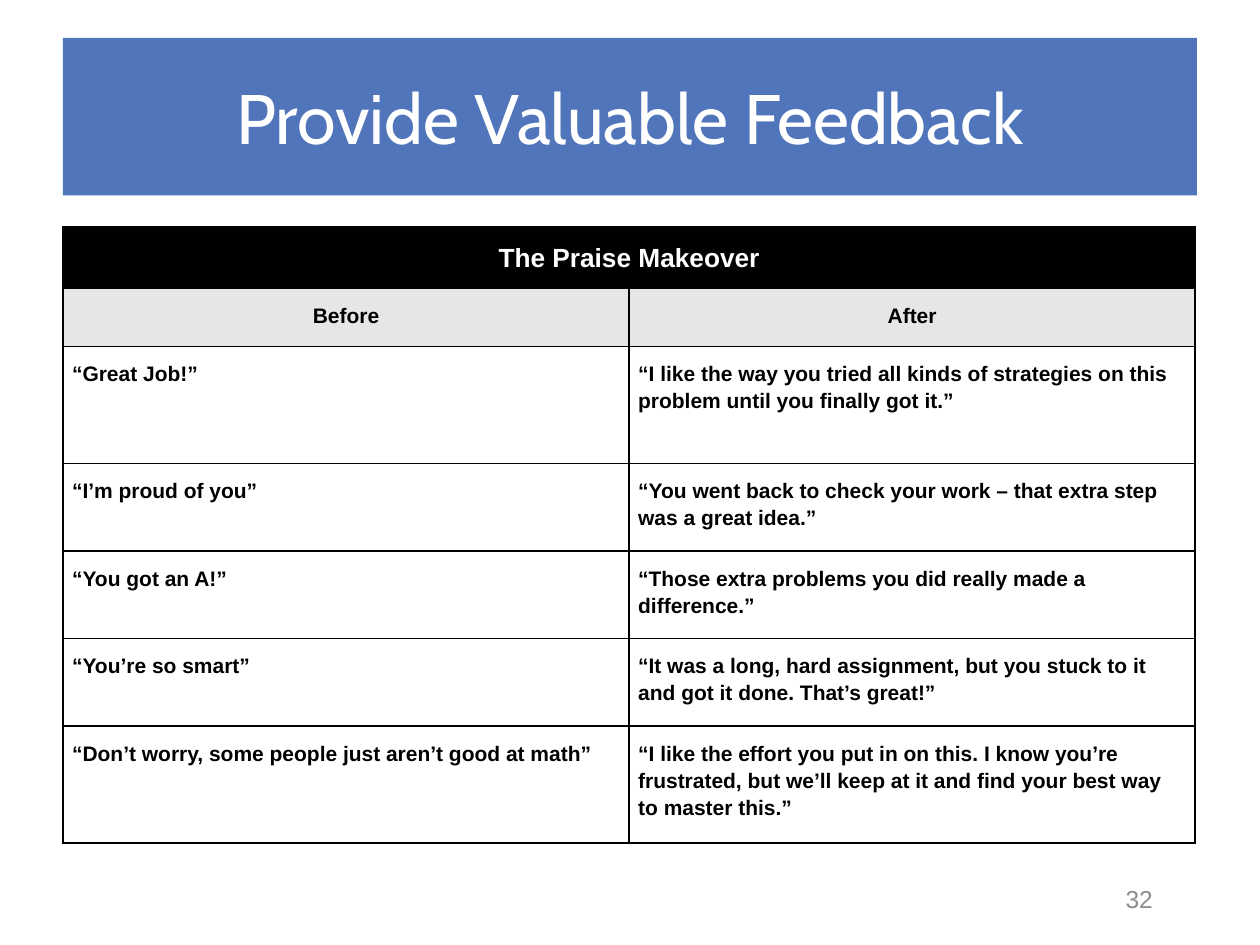
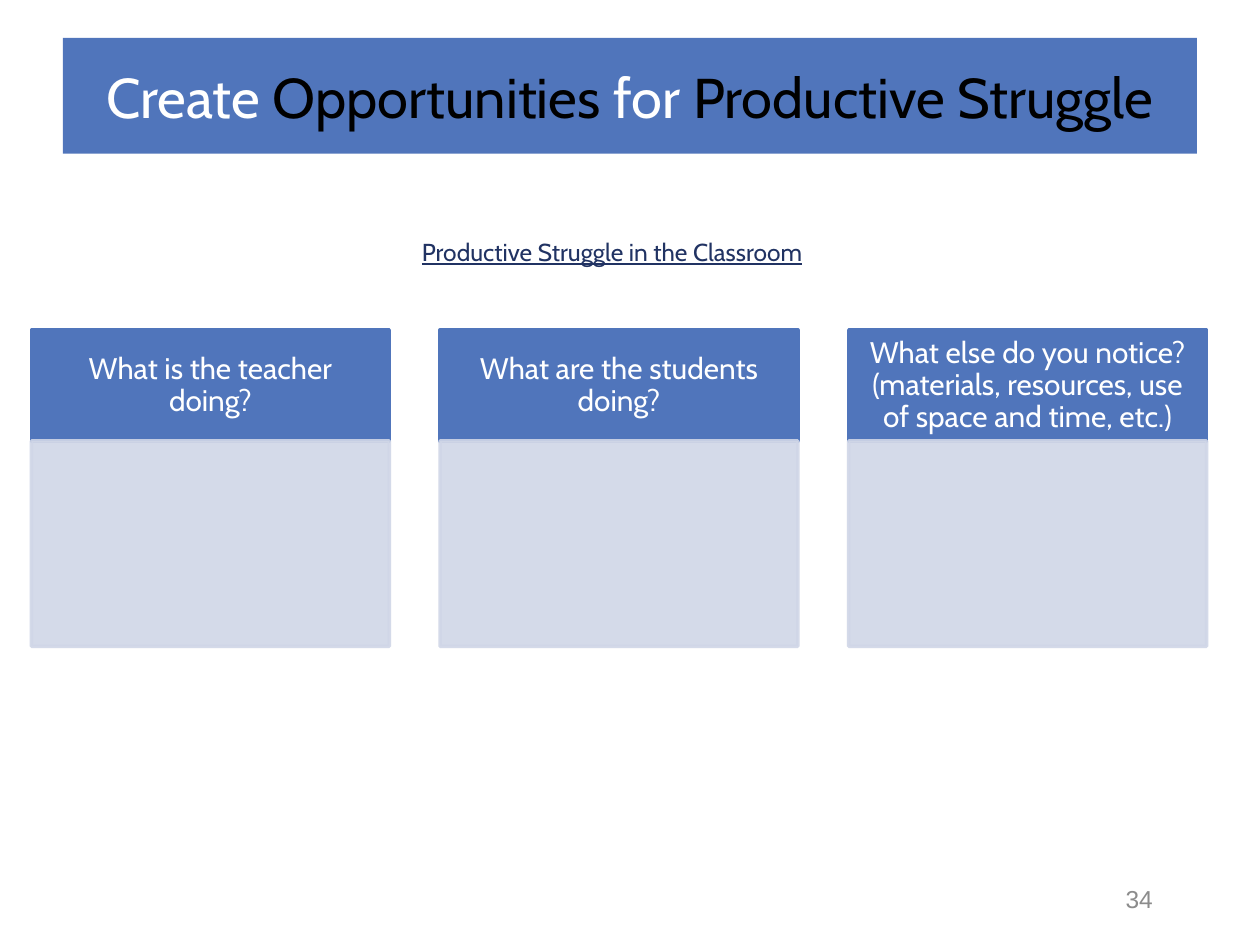
import dataclasses

import pptx
import pptx.dml.color
import pptx.enum.shapes
import pptx.enum.text
import pptx.oxml
import pptx.oxml.ns
import pptx.util

Pt = pptx.util.Pt
ALIGN = pptx.enum.text.PP_ALIGN
ANCHOR = pptx.enum.text.MSO_ANCHOR
RECT = pptx.enum.shapes.MSO_SHAPE.RECTANGLE


@dataclasses.dataclass(frozen=True)
class Theme:
    blue: str = "5075BB"
    pale: str = "D0D6E7"
    navy: str = "213363"
    gray: str = "8C8C8C"
    light: str = "E7E6E6"
    black: str = "000000"
    white: str = "FFFFFF"
    sans: str = "Arial"
    head: str = "Cabin"
    title: int = 40
    long: int = 32
    prompt: int = 17
    top: int = 15
    cell: int = 12
    small: int = 14


T = Theme()

PRAISE = [
    ("Before", "After"),
    ("“Great Job!”",
     "“I like the way you tried all kinds of strategies on this problem until you finally got it.”"),
    ("“I’m proud of you”",
     "“You went back to check your work – that extra step was a great idea.”"),
    ("“You got an A!”",
     "“Those extra problems you did really made a difference.”"),
    ("“You’re so smart”",
     "“It was a long, hard assignment, but you stuck to it and got it done. That’s great!”"),
    ("“Don’t worry, some people just aren’t good at math”",
     "“I like the effort you put in on this. I know you’re frustrated, "
     "but we’ll keep at it and find your best way to master this.”"),
]
HEIGHTS = [35.2, 33.1, 67, 50, 50, 50, 67]

PROMPTS = [
    "What is the teacher doing?",
    "What are the students doing?",
    "What else do you notice? (materials, resources, use of space and time, etc.)",
]


def color(code):
    return pptx.dml.color.RGBColor.from_string(code)


def write(frame, runs, size, face, align=ALIGN.CENTER, bold=False, under=False, space=None):
    """Fill the first paragraph with (text, colour) runs."""
    para = frame.paragraphs[0]
    para.alignment = align
    para.line_spacing = space
    for text, code in runs:
        run = para.add_run()
        run.text = text
        font = run.font
        font.name, font.size, font.bold, font.underline = face, Pt(size), bold, under
        font.color.rgb = color(code)


def inset(item, side, edge):
    """Set the margins of a text frame or a table cell."""
    item.margin_left = item.margin_right = Pt(side)
    item.margin_top = item.margin_bottom = Pt(edge)


def add_box(slide, area, fill, line=None, alpha=None):
    box = slide.shapes.add_shape(RECT, *map(Pt, area))
    box.shadow.inherit = False
    box.fill.solid()
    box.fill.fore_color.rgb = color(fill)
    if line:
        box.line.width = Pt(line)
        box.line.color.rgb = color(fill)
    else:
        box.line.fill.background()
    if alpha:
        for tint in box.element.spPr.iter(pptx.oxml.ns.qn("a:srgbClr")):
            tint.append(pptx.oxml.parse_xml(
                f'<a:alpha {pptx.oxml.ns.nsdecls("a")} val="{alpha * 1000}"/>'))
    frame = box.text_frame
    frame.word_wrap = True
    frame.vertical_anchor = ANCHOR.MIDDLE
    return box


def add_text(slide, area, text, size, face, code, anchor=ANCHOR.TOP, **style):
    frame = slide.shapes.add_textbox(*map(Pt, area)).text_frame
    frame.word_wrap = True
    frame.vertical_anchor = anchor
    write(frame, [(text, code)], size, face, **style)


def add_page(deck, number, runs, size, height, edge):
    """Add a slide with its title band and page number."""
    slide = deck.slides.add_slide(deck.slide_layouts[6])
    add_text(slide, (612, 499, 78, 29), str(number), T.small, T.sans, T.gray, ANCHOR.MIDDLE)
    frame = add_box(slide, (36, 21.6, 648, height), T.blue).text_frame
    inset(frame, 7.2, edge)
    write(frame, runs, size, T.head)
    return slide


def add_edges(cell):
    props = cell._tc.get_or_add_tcPr()
    for side in "LRTB":
        props.append(pptx.oxml.parse_xml(
            f'<a:ln{side} {pptx.oxml.ns.nsdecls("a")} w="{Pt(1)}"><a:solidFill>'
            f'<a:srgbClr val="{T.black}"/></a:solidFill></a:ln{side}>'))


def set_cell(cell, text, fill, code=T.black, size=T.cell, align=ALIGN.LEFT):
    inset(cell, 5.2, 7.2)
    cell.fill.solid()
    cell.fill.fore_color.rgb = color(fill)
    write(cell.text_frame, [(text, code)], size, T.sans, align, bold=True, space=1.15)


def add_praise(slide):
    area = (36, 129.6, 647, sum(HEIGHTS))
    table = slide.shapes.add_table(len(HEIGHTS), 2, *map(Pt, area)).table
    table.first_row = table.horz_banding = False
    for row, height in zip(table.rows, HEIGHTS):
        row.height = Pt(height)
    for cell in table.iter_cells():
        add_edges(cell)
    top = table.cell(0, 0)
    top.merge(table.cell(0, 1))
    set_cell(top, "The Praise Makeover", T.black, T.white, T.top, ALIGN.CENTER)
    for r, texts in enumerate(PRAISE, 1):
        fill, align = (T.light, ALIGN.CENTER) if r == 1 else (T.white, ALIGN.LEFT)
        for c, text in enumerate(texts):
            set_cell(table.cell(r, c), text, fill, align=align)


def add_prompt(slide, left, text):
    """Add a question box with an empty answer box below it."""
    wide, top, head, body = 204.5, 188.6, 63.4, 117.4
    frame = add_box(slide, (left, top, wide, head), T.blue, 2).text_frame
    inset(frame, 9.4, 5.8)
    write(frame, [(text, T.white)], T.prompt, T.head, space=0.9)
    add_box(slide, (left, top + head, wide, body), T.pale, 2, alpha=90)


def main():
    deck = pptx.Presentation()
    deck.slide_width, deck.slide_height = Pt(720), Pt(540)

    praise = add_page(deck, 32, [("Provide Valuable Feedback", T.white)], T.title, 90, 7.2)
    add_praise(praise)

    title = [("Create ", T.white), ("Opportunities", T.black),
             (" for ", T.white), ("Productive Struggle", T.black)]
    effort = add_page(deck, 34, title, T.long, 66.2, 3.6)
    for i, text in enumerate(PROMPTS):
        add_prompt(effort, 18 + i * 233.5, text)
    add_text(effort, (234, 131.8, 252, 24.5), "Productive Struggle in the Classroom",
             T.small, T.head, T.navy, align=ALIGN.LEFT, under=True)

    deck.save("out.pptx")


if __name__ == "__main__":
    main()
